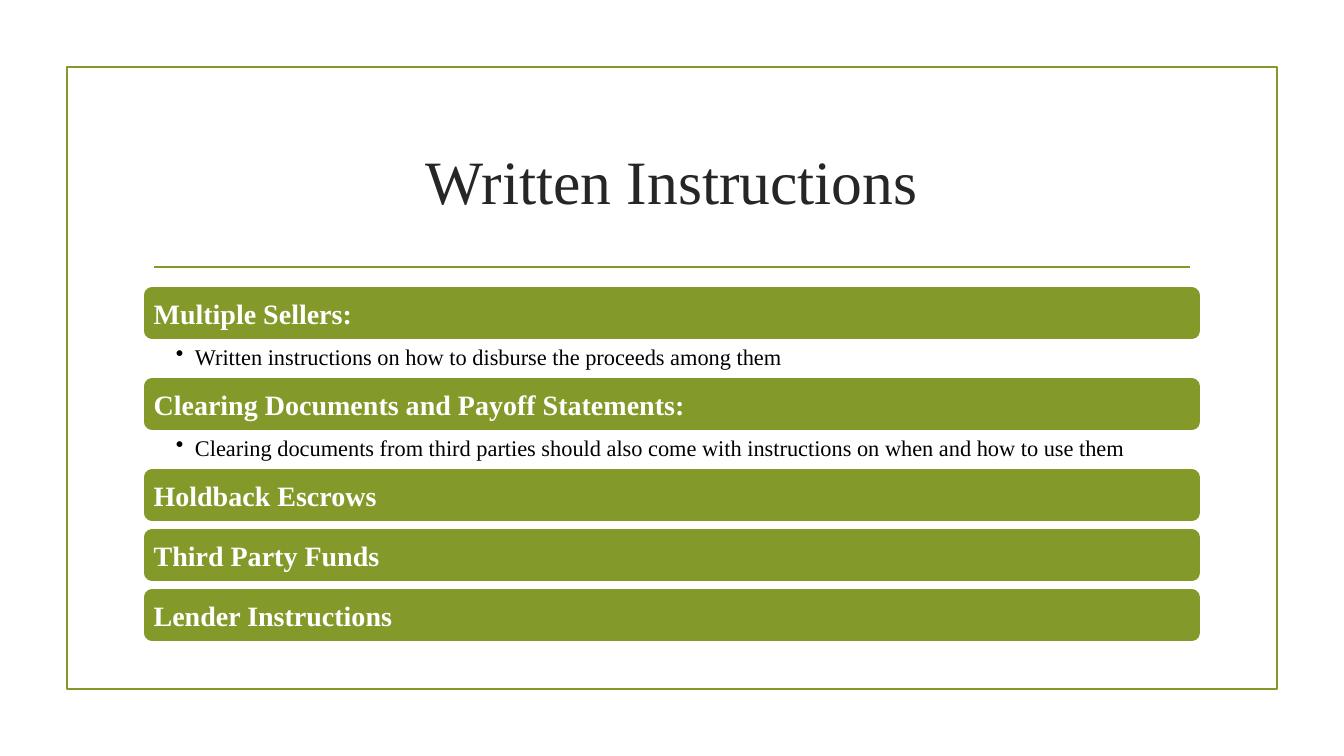
from lxml import etree
from pptx import Presentation
from pptx.dml.color import RGBColor
from pptx.enum.shapes import MSO_CONNECTOR, MSO_SHAPE
from pptx.enum.text import MSO_ANCHOR, PP_ALIGN
from pptx.oxml.ns import qn
from pptx.util import Pt

RECT, ROUNDED = MSO_SHAPE.RECTANGLE, MSO_SHAPE.ROUNDED_RECTANGLE
STRAIGHT = MSO_CONNECTOR.STRAIGHT
TOP, MIDDLE = MSO_ANCHOR.TOP, MSO_ANCHOR.MIDDLE
LEFT, CENTER = PP_ALIGN.LEFT, PP_ALIGN.CENTER

# Content: heading and optional bullet
TITLE = "Written Instructions"
TOPICS = [
    ("Multiple Sellers:", "Written instructions on how to disburse the proceeds among them"),
    ("Clearing Documents and Payoff Statements:",
     "Clearing documents from third parties should also come with instructions "
     "on when and how to use them"),
    ("Holdback Escrows", None),
    ("Third Party Funds", None),
    ("Lender Instructions", None),
]

# Look and layout, in px
FONT = "Times New Roman"
COLORS = {"olive": "83992A", "white": "FFFFFF", "title": "262626", "detail": "000000"}
SLIDE_W, SLIDE_H = 1344, 756
FRAME = (67, 67, 1210, 622)
RULE_LEFT, RULE_RIGHT, RULE_Y = 154, 1190, 267
BODY_LEFT, BODY_W = 143, 1058
TITLE_TOP, TITLE_H = 108, 144
TOPICS_TOP, HEADING_H, DETAIL_H, GAP = 286, 54, 37, 6
BULLET_INDENT = 19
LINE_WIDTH = 1.25


def px(length):
    return round(length * 914400 / 100.8)


def color(name):
    return RGBColor.from_string(COLORS[name])


def style_line(line, name):
    line.color.rgb = color(name)
    line.width = Pt(LINE_WIDTH)


def write(shape, text, size, name, insets, anchor=MIDDLE, align=LEFT, bold=False):
    frame = shape.text_frame
    frame.word_wrap = True
    frame.vertical_anchor = anchor
    frame.margin_left, frame.margin_top, frame.margin_right, frame.margin_bottom = map(px, insets)
    paragraph = frame.paragraphs[0]
    paragraph.text = text
    paragraph.alignment = align
    font = paragraph.font
    font.name, font.size, font.bold = FONT, Pt(size), bold
    font.color.rgb = color(name)


def add_bullet(paragraph):
    properties = paragraph._p.get_or_add_pPr()
    properties.set("marL", str(px(BULLET_INDENT)))
    properties.set("indent", str(-px(BULLET_INDENT)))
    etree.SubElement(properties, qn("a:buChar")).set("char", "•")


def add_box(kind, bounds):
    box = slide.shapes.add_shape(kind, *map(px, bounds))
    box.shadow.inherit = False
    return box


def add_text(bounds):
    return slide.shapes.add_textbox(*map(px, bounds))


prs = Presentation()
prs.slide_width, prs.slide_height = px(SLIDE_W), px(SLIDE_H)
slide = prs.slides.add_slide(prs.slide_layouts[6])

# Frame and rule
border = add_box(RECT, FRAME)
border.fill.background()
style_line(border.line, "olive")
rule = slide.shapes.add_connector(STRAIGHT, *map(px, (RULE_LEFT, RULE_Y, RULE_RIGHT, RULE_Y)))
style_line(rule.line, "olive")
etree.SubElement(rule._element.spPr, qn("a:effectLst"))

# Title
title = add_text((BODY_LEFT, TITLE_TOP, BODY_W, TITLE_H))
write(title, TITLE, 44, "title", (10, 5, 10, 5), align=CENTER)

# Topics, stacked: a bullet fills the space below its heading
top = TOPICS_TOP
for heading, detail in TOPICS:
    bar = add_box(ROUNDED, (BODY_LEFT, top, BODY_W, HEADING_H))
    bar.fill.solid()
    bar.fill.fore_color.rgb = color("olive")
    style_line(bar.line, "white")
    write(bar, heading, 20, "white", (8, 5, 8, 5), bold=True)
    top += HEADING_H
    if detail:
        note = add_text((BODY_LEFT, top, BODY_W, DETAIL_H))
        add_bullet(note.text_frame.paragraphs[0])
        write(note, detail, 16, "detail", (33, 3, 16, 3), anchor=TOP)
        top += DETAIL_H
    else:
        top += GAP

prs.save("out.pptx")
